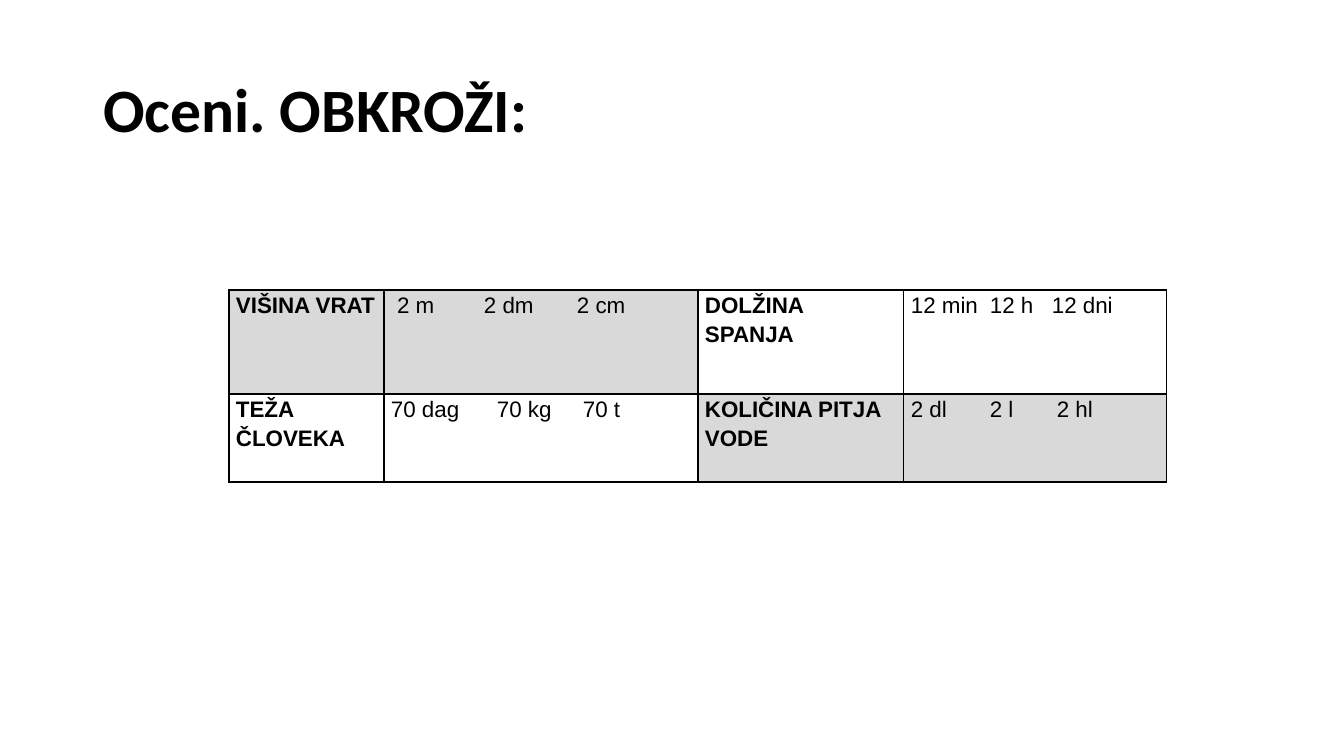
"""Build a slide with a table of measurements to estimate and circle."""
from lxml import etree
from pptx import Presentation
from pptx.dml.color import RGBColor
from pptx.enum import text
from pptx.oxml import ns
from pptx import util as u

PX = 914400 / 100.8
BLACK = RGBColor(0x00, 0x00, 0x00)
GREY = RGBColor(0xD9, 0xD9, 0xD9)

COLUMN_WIDTHS = [155, 314, 206, 263]
ROW_HEIGHTS = [104, 88]
QUESTIONS = [
    [("VIŠINA VRAT", [" 2 m", "2 dm", "2 cm"], [93, 186], True),
     ("DOLŽINA SPANJA", ["12 min", "12 h", "12 dni"], [79, 141], False)],
    [("TEŽA ČLOVEKA", ["70 dag", "70 kg", "70 t"], [106, 192], False),
     ("KOLIČINA PITJA VODE", ["2 dl", "2 l", "2 hl"], [79, 146], True)],
]


def px(length):
    return u.Emu(round(length * PX))


def write(para, words, font, size, bold, spacing):
    para.alignment = text.PP_ALIGN.LEFT
    para.line_spacing = spacing
    span = para.add_run()
    span.text = words
    for name, value in {"name": font, "size": u.Pt(size), "bold": bold}.items():
        setattr(span.font, name, value)
    span.font.color.rgb = BLACK


deck = Presentation()
deck.slide_width, deck.slide_height = px(1344), px(756)
page = deck.slides.add_slide(deck.slide_layouts[5])

title = page.shapes.title
for side, length in {"left": 93, "top": 40, "width": 1159, "height": 146}.items():
    setattr(title, side, px(length))
title.text_frame.auto_size = text.MSO_AUTO_SIZE.NONE
title.text_frame.vertical_anchor = text.MSO_ANCHOR.MIDDLE
write(title.text_frame.paragraphs[0], "Oceni. OBKROŽI:", "Calibri", 44, True, 0.9)

table = page.shapes.add_table(
    len(ROW_HEIGHTS), len(COLUMN_WIDTHS), px(229), px(290),
    px(sum(COLUMN_WIDTHS)), px(sum(ROW_HEIGHTS))).table
table.first_row = table.horz_banding = False
for column, width in zip(table.columns, COLUMN_WIDTHS):
    column.width = px(width)
for row, height in zip(table.rows, ROW_HEIGHTS):
    row.height = px(height)

cell_margins = {"margin_left": 7, "margin_top": 0, "margin_right": 7, "margin_bottom": 0}
for cell in table.iter_cells():
    for margin, length in cell_margins.items():
        setattr(cell, margin, px(length))
    properties = cell._tc.get_or_add_tcPr()
    for border in ("a:lnL", "a:lnR", "a:lnT", "a:lnB"):
        line = etree.SubElement(properties, ns.qn(border), w=str(u.Pt(1)))
        fill = etree.SubElement(line, ns.qn("a:solidFill"))
        etree.SubElement(fill, ns.qn("a:srgbClr"), val=str(BLACK))

for row_index, questions in enumerate(QUESTIONS):
    for pair_index, (quantity, answers, stops, shaded) in enumerate(questions):
        label = table.cell(row_index, 2 * pair_index)
        choices = table.cell(row_index, 2 * pair_index + 1)
        for cell, words in ((label, quantity), (choices, "\t".join(answers))):
            write(cell.text_frame.paragraphs[0], words, "Arial", 16, cell is label, 1.15)
            if shaded:
                cell.fill.solid()
                cell.fill.fore_color.rgb = GREY
            else:
                cell.fill.background()
        para_properties = choices.text_frame.paragraphs[0]._p.get_or_add_pPr()
        tabs = etree.SubElement(para_properties, ns.qn("a:tabLst"))
        for stop in stops:
            etree.SubElement(tabs, ns.qn("a:tab"), pos=str(px(stop)), algn="l")

deck.save("out.pptx")
